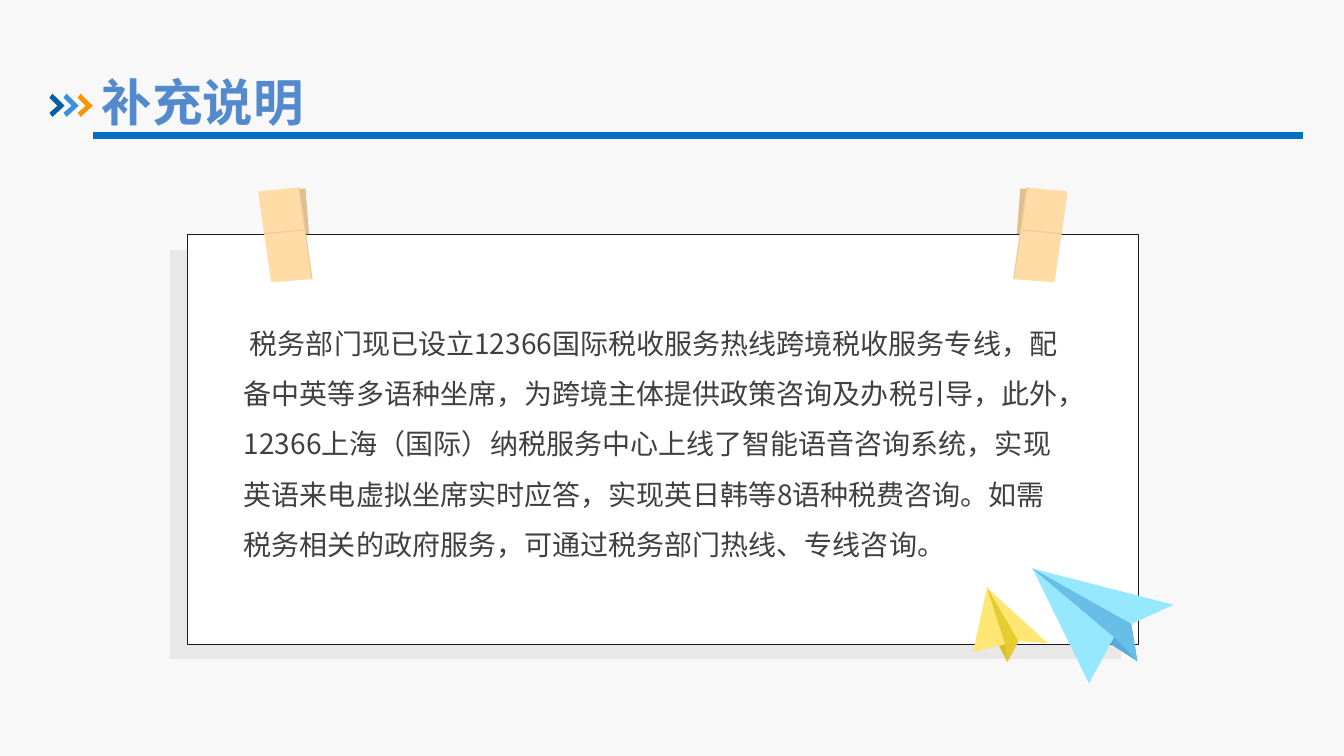
from lxml.etree import SubElement
from pptx import Presentation
from pptx.dml.color import RGBColor
from pptx.enum.shapes import MSO_CONNECTOR
from pptx.enum.text import MSO_ANCHOR, MSO_AUTO_SIZE, PP_ALIGN
from pptx.oxml.ns import qn
from pptx.util import Inches, Pt

FONT = "Noto Sans CJK SC"
TITLE = "补充说明"
BODY = (
    "税务部门现已设立12366国际税收服务热线跨境税收服务专线，"
    "配备中英等多语种坐席，为跨境主体提供政策咨询及办税引导，"
    "此外，12366上海（国际）纳税服务中心上线了智能语音咨询系统，"
    "实现英语来电虚拟坐席实时应答，实现英日韩等8语种税费咨询。"
    "如需税务相关的政府服务，可通过税务部门热线、专线咨询。"
)

BACKGROUND = RGBColor(0xF8, 0xF8, 0xF8)
RULE = RGBColor(0x00, 0x70, 0xC0)
TITLE_BLUE = RGBColor(0x53, 0x8A, 0xCE)
BODY_GREY = RGBColor(0x40, 0x40, 0x40)
CARD = RGBColor(0xFF, 0xFF, 0xFF)
CARD_EDGE = RGBColor(0x23, 0x18, 0x15)
CARD_SHADE = RGBColor(0xE8, 0xE8, 0xE8)
TAPE = RGBColor(0xFF, 0xDB, 0xA6)
TAPE_SHADE = RGBColor(0xDE, 0xBF, 0x90)
TAPE_EDGE = RGBColor(0xEB, 0xCA, 0x98)
CREASE = RGBColor(0xEB, 0xC9, 0x99)
CHEVRONS = [RGBColor(0x00, 0x5D, 0xA2), RGBColor(0x39, 0x92, 0xDB), RGBColor(0xF7, 0x96, 0x00)]
SKY = RGBColor(0x96, 0xE8, 0xFF)
SKY_FOLD = RGBColor(0x67, 0xBE, 0xE6)
SKY_DEEP = RGBColor(0x57, 0xA9, 0xD9)
YELLOW = RGBColor(0xFF, 0xE7, 0x75)
YELLOW_FOLD = RGBColor(0xE6, 0xCB, 0x31)
YELLOW_DEEP = RGBColor(0xD9, 0xC0, 0x24)

CHEVRON = [(0, 0.04), (0.03, 0), (0.15, 0.12), (0.03, 0.23), (0, 0.19), (0.08, 0.12)]
CHEVRON_LEFT, CHEVRON_TOP, CHEVRON_STEP = 0.49, 0.93, 0.14
CARD_LEFT, CARD_TOP, CARD_W, CARD_H = 1.86, 2.33, 9.43, 4.06
SHADE_DX, SHADE_DY = -0.17, 0.15

MIRROR_SUM = 13.15
TAPE_BACK = [(2.69, 2.8), (3.1, 2.77), (3.03, 1.87), (2.62, 1.91)]
TAPE_FRONT = [(2.69, 2.8), (3.1, 2.77), (2.97, 1.86), (2.56, 1.9)]
TAPE_SIDE = [(2.97, 1.86), (3.1, 2.77), (3.09, 2.77), (2.96, 1.86)]
TAPE_CREASE = [(2.62, 2.32), (3.02, 2.28)]

BLUE_NOSE, BLUE_WING, BLUE_TAIL = (10.24, 5.64), (11.22, 6.19), (11.28, 6.56)
GOLD_NOSE, GOLD_WING, GOLD_TAIL = (9.79, 5.83), (10.1, 6.36), (9.99, 6.57)
PLANES = [
    ([BLUE_TAIL, (11, 6.38), BLUE_NOSE, BLUE_WING], SKY_DEEP),
    ([BLUE_NOSE, (11.05, 6.32), (10.8, 6.78)], SKY),
    ([BLUE_WING, BLUE_NOSE, (11.64, 6)], SKY),
    ([BLUE_TAIL, (11.05, 6.32), BLUE_NOSE, BLUE_WING], SKY_FOLD),
    ([GOLD_TAIL, (9.91, 6.41), GOLD_NOSE, GOLD_WING], YELLOW_DEEP),
    ([GOLD_NOSE, (9.97, 6.39), (9.65, 6.47)], YELLOW),
    ([GOLD_WING, GOLD_NOSE, (10.39, 6.38)], YELLOW),
    ([GOLD_TAIL, (9.97, 6.39), GOLD_NOSE, GOLD_WING], YELLOW_FOLD),
]


def shift(points, dx, dy):
    return [(x + dx, y + dy) for x, y in points]


def both_sides(points):
    return [[(MIRROR_SUM - x, y) for x, y in points], points]


def add_polygon(s, points, fill, edge=None):
    corners = [(Inches(x), Inches(y)) for x, y in points]
    builder = s.shapes.build_freeform(*corners[0], scale=1.0)
    builder.add_line_segments(corners[1:], close=True)
    sp = builder.convert_to_shape()
    sp.shadow.inherit = False
    sp.fill.solid()
    sp.fill.fore_color.rgb = fill
    if edge is None:
        sp.line.fill.background()
    else:
        sp.line.color.rgb = edge
        sp.line.width = Pt(0.75)


def add_line(s, ends, color, width):
    (x1, y1), (x2, y2) = ends
    line = s.shapes.add_connector(
        MSO_CONNECTOR.STRAIGHT, Inches(x1), Inches(y1), Inches(x2), Inches(y2))
    line.line.color.rgb = color
    line.line.width = Pt(width)
    SubElement(line._element.spPr, qn("a:effectLst"))


def place(sp, left, top, width, height):
    sp.left, sp.top, sp.width, sp.height = map(Inches, (left, top, width, height))


def write(sp, text, size, color, bold=False):
    tf = sp.text_frame
    tf.word_wrap = True
    tf.auto_size = MSO_AUTO_SIZE.SHAPE_TO_FIT_TEXT
    tf.vertical_anchor = MSO_ANCHOR.TOP
    p = tf.paragraphs[0]
    p.alignment = PP_ALIGN.LEFT
    r = p.add_run()
    r.text = text
    r.font.size = Pt(size)
    r.font.bold = bold
    r.font.color.rgb = color
    r.font.name = FONT
    SubElement(r.font._element, qn("a:ea")).set("typeface", FONT)
    return p


def main():
    prs = Presentation()
    prs.slide_width, prs.slide_height = Inches(13.33), Inches(7.5)
    s = prs.slides.add_slide(prs.slide_layouts[5])
    s.background.fill.solid()
    s.background.fill.fore_color.rgb = BACKGROUND

    add_line(s, [(0.92, 1.34), (12.92, 1.34)], RULE, 5)
    for i, color in enumerate(CHEVRONS):
        add_polygon(s, shift(CHEVRON, CHEVRON_LEFT + i * CHEVRON_STEP, CHEVRON_TOP), color)

    title = s.shapes.title
    place(title, 1.01, 0.71, 12.32, 0.61)
    tf = title.text_frame
    tf.margin_left = tf.margin_top = tf.margin_right = tf.margin_bottom = 0
    p = write(title, TITLE, 36, TITLE_BLUE, bold=True)
    p.line_spacing = 1.0
    p.space_before = Pt(0)

    right, bottom = CARD_LEFT + CARD_W, CARD_TOP + CARD_H
    card = [(CARD_LEFT, CARD_TOP), (right, CARD_TOP), (right, bottom), (CARD_LEFT, bottom)]
    add_polygon(s, shift(card, SHADE_DX, SHADE_DY), CARD_SHADE)
    for points in both_sides(TAPE_BACK):
        add_polygon(s, points, TAPE_SHADE)
    add_polygon(s, card, CARD, CARD_EDGE)
    for front, side, crease in zip(*map(both_sides, (TAPE_FRONT, TAPE_SIDE, TAPE_CREASE))):
        add_polygon(s, front, TAPE)
        add_polygon(s, side, TAPE_EDGE)
        add_line(s, crease, CREASE, 0.75)
    for points, color in PLANES:
        add_polygon(s, points, color)

    body = s.shapes.add_textbox(0, 0, 0, 0)
    place(body, 2.32, 3.02, 8.38, 2.62)
    p = write(body, BODY, 20, BODY_GREY)
    p.line_spacing = 1.5
    p._p.get_or_add_pPr().set("indent", str(Inches(0.06)))

    prs.save("out.pptx")


if __name__ == "__main__":
    main()
